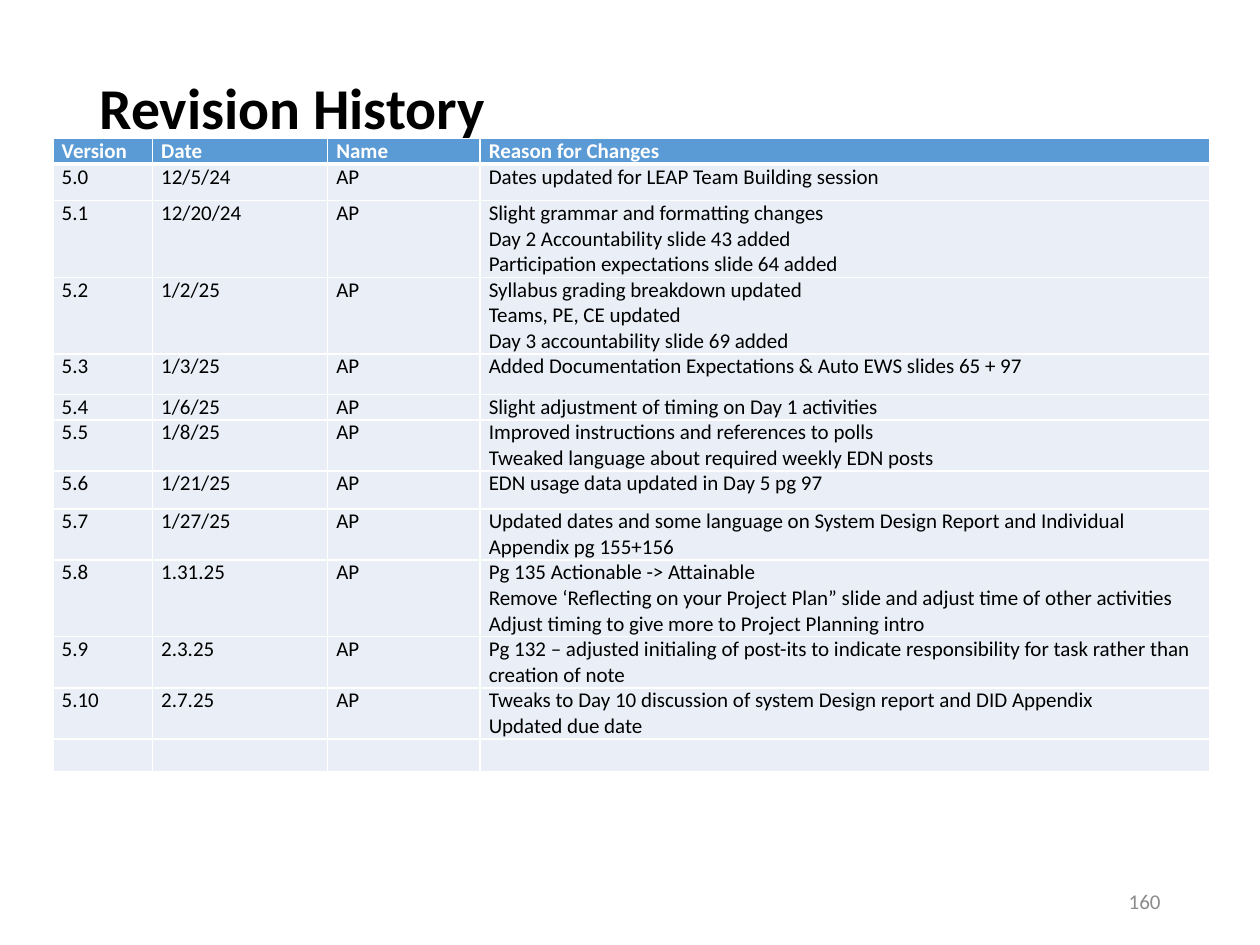
from lxml import etree
from pptx import Presentation, util as u
from pptx.dml.color import RGBColor
from pptx.enum import text
from pptx.oxml import ns

COLORS = {
    "ink": "000000",
    "white": "FFFFFF",
    "header": "5B9BD5",
    "band": "EAEFF7",
    "muted": "8C8C8C",
}
GRID_COLUMNS, GRID_ROWS = 100, 75
LINE_ROWS = 2.03  # height of one 12 pt table line, in grid rows

COLUMN_WIDTHS = [7.9, 13.9, 12.1, 57.9]
HEADINGS = ["Version", "Date", "Name", "Reason for Changes"]
AUTHOR = "AP"
# version, date, reason for changes, lines shown, least height in grid rows
REVISIONS = [
    ("5.0", "12/5/24", "Dates updated for LEAP Team Building session", 1, 2.9),
    ("5.1", "12/20/24", "Slight grammar and formatting changes\n"
     "Day 2 Accountability slide 43 added\n"
     "Participation expectations slide 64 added", 3, 0),
    ("5.2", "1/2/25", "Syllabus grading breakdown updated\n"
     "Teams, PE, CE updated\n"
     "Day 3 accountability slide 69 added", 3, 0),
    ("5.3", "1/3/25", "Added Documentation Expectations & Auto EWS slides 65 + 97", 1, 3.2),
    ("5.4", "1/6/25", "Slight adjustment of timing on Day 1 activities", 1, 0),
    ("5.5", "1/8/25", "Improved instructions and references to polls\n"
     "Tweaked language about required weekly EDN posts", 2, 0),
    ("5.6", "1/21/25", "EDN usage data updated in Day 5 pg 97", 1, 3),
    ("5.7", "1/27/25", "Updated dates and some language on System Design Report "
     "and Individual Appendix pg 155+156", 2, 0),
    ("5.8", "1.31.25", "Pg 135 Actionable -> Attainable\n"
     "Remove ‘Reflecting on your Project Plan” slide and adjust time of other activities\n"
     "Adjust timing to give more to Project Planning intro", 3, 0),
    ("5.9", "2.3.25", "Pg 132 – adjusted initialing of post-its to indicate "
     "responsibility for task rather than creation of note", 2, 0),
    ("5.10", "2.7.25", "Tweaks to Day 10 discussion of system Design report and DID Appendix\n"
     "Updated due date", 2, 0),
]
SPARE_ROW_HEIGHT = 2.6


def write_text(frame, content, font="Calibri", size=12, color="ink", bold=False,
               align=text.PP_ALIGN.LEFT, spacing=1.0):
    """Fill a text frame, one paragraph for each line of content."""
    frame.word_wrap = True
    frame.text = content
    for paragraph in frame.paragraphs:
        paragraph.alignment = align
        paragraph.line_spacing = spacing
        for run in paragraph.runs:
            run.font.name = font
            run.font.size = u.Pt(size)
            run.font.bold = bold
            run.font.color.rgb = RGBColor.from_string(COLORS[color])
        if not paragraph.runs:
            paragraph._p.get_or_add_endParaRPr().set("sz", str(size * 100))


def set_borders(cell, color, **widths):
    """Draw cell borders; widths are points keyed by L, R, T and B, in that order."""
    properties = cell._tc.get_or_add_tcPr()
    for side, width in widths.items():
        line = etree.SubElement(properties, ns.qn(f"a:ln{side}"), w=str(u.Pt(width)))
        fill = etree.SubElement(line, ns.qn("a:solidFill"))
        etree.SubElement(fill, ns.qn("a:srgbClr"), val=COLORS[color])


class SlideBuilder:
    """Holds the current slide and places elements on its grid."""

    def __init__(self, presentation):
        self.column = presentation.slide_width / GRID_COLUMNS
        self.row = presentation.slide_height / GRID_ROWS
        self.slide = presentation.slides.add_slide(presentation.slide_layouts[6])

    def place(self, left, top, width, height):
        return (int(left * self.column), int(top * self.row),
                int(width * self.column), int(height * self.row))

    def add_text(self, content, box, anchor=text.MSO_ANCHOR.MIDDLE, inset_top=0.5, **style):
        frame = self.slide.shapes.add_textbox(*self.place(*box)).text_frame
        frame.vertical_anchor = anchor
        frame.margin_top = int(inset_top * self.row)
        write_text(frame, content, **style)

    def add_table(self, left, top, widths, heights, records):
        box = self.place(left, top, sum(widths), sum(heights))
        table = self.slide.shapes.add_table(len(records), len(widths), *box).table
        for column, width in zip(table.columns, widths):
            column.width = int(width * self.column)
        for row, height in zip(table.rows, heights):
            row.height = int(height * self.row)
        for row_index, record in enumerate(records):
            for column_index, content in enumerate(record):
                self.format_cell(table.cell(row_index, column_index), content, row_index)

    def format_cell(self, cell, content, row_index):
        is_header = row_index == 0
        cell.margin_left = cell.margin_right = int(0.7 * self.column)
        cell.margin_top = cell.margin_bottom = 0
        set_borders(cell, "white", L=1, R=1,
                    T=3 if row_index == 1 else 1, B=3 if is_header else 1)
        cell.fill.solid()
        cell.fill.fore_color.rgb = RGBColor.from_string(
            COLORS["header" if is_header else "band"])
        write_text(cell.text_frame, content, bold=is_header,
                   color="white" if is_header else "ink")


def main():
    presentation = Presentation()
    presentation.slide_width, presentation.slide_height = u.Inches(10), u.Inches(7.5)
    builder = SlideBuilder(presentation)

    builder.add_text("Revision History", (6.9, 4, 86.2, 14.5), size=33, bold=True,
                     spacing=0.9, anchor=text.MSO_ANCHOR.TOP, inset_top=2.3)

    records, heights = [HEADINGS], [LINE_ROWS]
    for version, date, reason, lines, least_height in REVISIONS:
        records.append([version, date, AUTHOR, reason])
        heights.append(max(lines * LINE_ROWS, least_height))
    records.append([""] * len(HEADINGS))
    heights.append(SPARE_ROW_HEIGHT)
    builder.add_table(4.2, 11, COLUMN_WIDTHS, heights, records)

    builder.add_text("160", (70.6, 69.5, 22.5, 4), color="muted",
                     align=text.PP_ALIGN.RIGHT)
    presentation.save("out.pptx")


if __name__ == "__main__":
    main()
